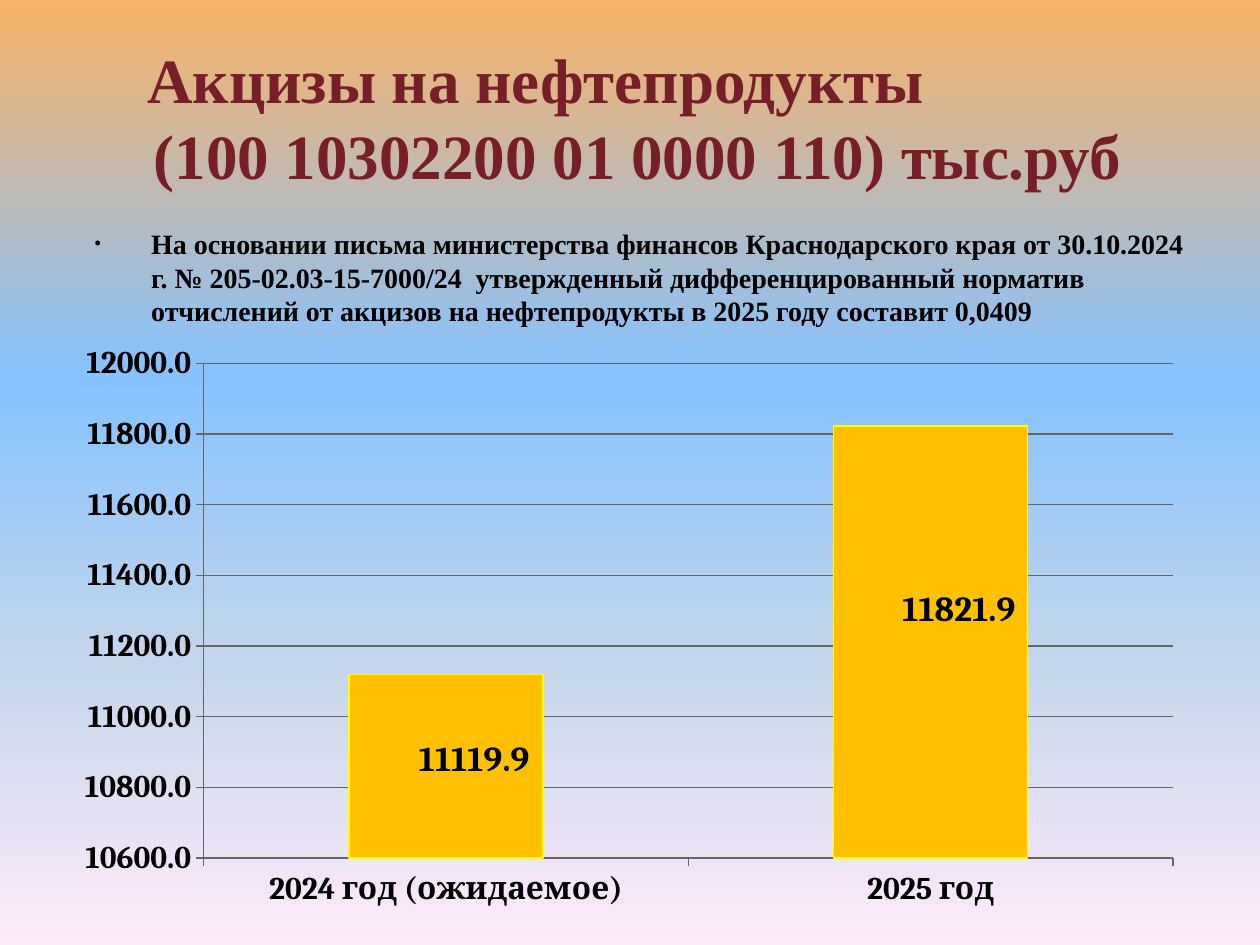
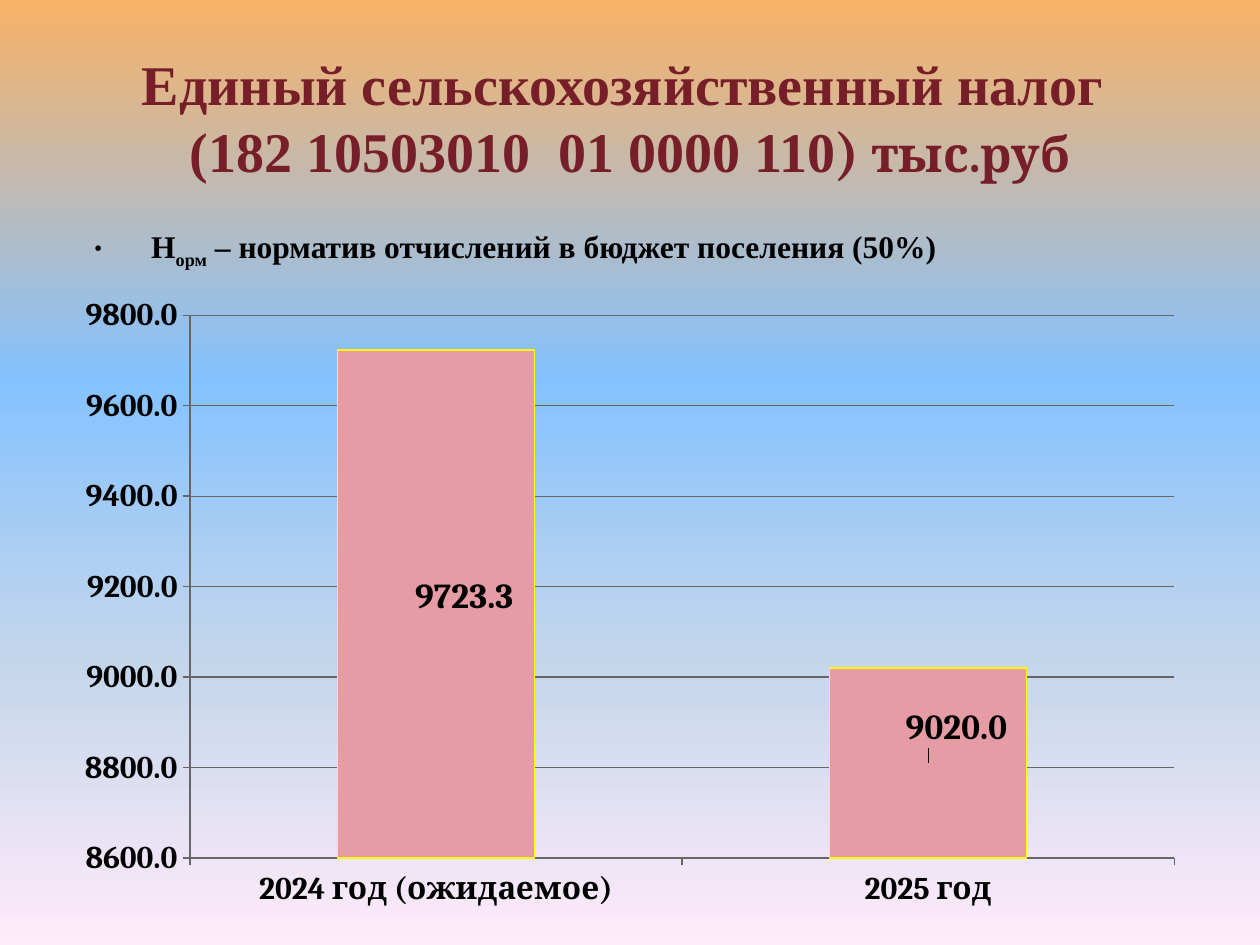
from dataclasses import dataclass

import pptx
import pptx.chart.data
import pptx.dml.color
import pptx.enum.chart
import pptx.enum.text
import pptx.oxml
import pptx.oxml.ns
import pptx.util
from lxml import etree

WIDTH, HEIGHT = pptx.util.Inches(10), pptx.util.Inches(7.5)
COLUMN, ROW = WIDTH // 20, HEIGHT // 150
CHART_BOTTOM = 146

SERIF, CHART_FONT = "Times New Roman", "Cambria"
MAROON, BLACK, YELLOW, GRAY = "771F28", "000000", "FFFF00", "666666"
BACKGROUND = {0: "F9B268", 40: "85C2FF", 70: "C4D6EB", 100: "FFEBFA"}

YEARS = ("2024 год (ожидаемое)", "2025 год")
LABEL_SHIFTS = ((0.025, -0.01), (0.025, -0.055))
Align = pptx.enum.text.PP_ALIGN


@dataclass(frozen=True)
class Span:
    text: str
    size: float
    font: str = SERIF
    baseline: int = 0


@dataclass(frozen=True)
class TitleLine:
    spans: tuple[Span, ...]
    align: Align = Align.CENTER
    indent: float = 0


@dataclass(frozen=True)
class TaxChart:
    values: tuple[float, float]
    color: str
    top: int
    minimum: float
    maximum: float
    plot: tuple[float, float, float, float]


@dataclass(frozen=True)
class TaxSlide:
    title: tuple[TitleLine, ...]
    note: tuple[Span, ...]
    chart: TaxChart


SLIDES = (
    TaxSlide(
        title=(
            TitleLine((Span("Акцизы на нефтепродукты", 36),), Align.LEFT, 0.57),
            TitleLine((Span("(100 10302200 01 0000 110) тыс.руб", 36),), indent=0.12),
        ),
        note=(
            Span(
                "На основании письма министерства финансов Краснодарского края от "
                "30.10.2024 г. № 205-02.03-15-7000/24  утвержденный дифференцированный "
                "норматив отчислений от акцизов на нефтепродукты в 2025 году составит 0,0409",
                16,
            ),
        ),
        chart=TaxChart((11119.9, 11821.9), "FFC000", 53, 10600, 12000,
                       (0.124, 0.05, 0.855, 0.845)),
    ),
    TaxSlide(
        title=(
            TitleLine((Span("Единый сельскохозяйственный налог ", 32),)),
            TitleLine((
                Span("(182 10503010  01 0000 110", 32),
                Span(") ", 32, CHART_FONT),
                Span("тыс.руб", 28, CHART_FONT),
            )),
        ),
        note=(
            Span("Н", 18),
            Span("орм", 18, baseline=-25),
            Span(" – норматив отчислений в бюджет поселения (50%)", 18),
        ),
        chart=TaxChart((9723.3, 9020), "E69CA4", 45, 8600, 9800,
                       (0.112, 0.05, 0.868, 0.853)),
    ),
)


def rgb(color: str) -> pptx.dml.color.RGBColor:
    return pptx.dml.color.RGBColor.from_string(color)


def add_element(parent, tag: str, **attributes):
    element = etree.SubElement(parent, pptx.oxml.ns.qn(tag))
    for name, value in attributes.items():
        element.set(name, str(value))
    return element


def paint_background(master) -> None:
    fill = master.background.fill
    fill.gradient()
    fill.gradient_angle = 270
    stops = next(master.element.iter(pptx.oxml.ns.qn("a:gsLst")))
    for stop in list(stops):
        stops.remove(stop)
    for percent, color in BACKGROUND.items():
        stop = add_element(stops, "a:gs", pos=percent * 1000)
        add_element(stop, "a:srgbClr", val=color)


def place(box, top: int, rows: int) -> None:
    box.left, box.top = COLUMN, top * ROW
    box.width, box.height = 18 * COLUMN, rows * ROW
    box.text_frame.auto_size = pptx.enum.text.MSO_AUTO_SIZE.NONE
    box.text_frame.word_wrap = True


def write_spans(paragraph, spans: tuple[Span, ...], color: str) -> None:
    paragraph.space_before = pptx.util.Pt(0)
    for span in spans:
        run = paragraph.add_run()
        run.text = span.text
        run.font.name, run.font.size = span.font, pptx.util.Pt(span.size)
        run.font.bold = True
        run.font.color.rgb = rgb(color)
        if span.baseline:
            run._r.get_or_add_rPr().set("baseline", str(span.baseline * 1000))


def set_indent(paragraph, left: float, first: float = 0):
    properties = paragraph._p.get_or_add_pPr()
    properties.set("marL", str(pptx.util.Inches(left)))
    properties.set("indent", str(pptx.util.Inches(first)))
    return properties


def write_title(box, lines: tuple[TitleLine, ...]) -> None:
    place(box, 6, 25)
    frame = box.text_frame
    frame.vertical_anchor = pptx.enum.text.MSO_ANCHOR.MIDDLE
    for number, line in enumerate(lines):
        paragraph = frame.add_paragraph() if number else frame.paragraphs[0]
        paragraph.alignment = line.align
        set_indent(paragraph, line.indent)
        write_spans(paragraph, line.spans, MAROON)


def write_note(box, spans: tuple[Span, ...]) -> None:
    place(box, 35, 103)
    paragraph = box.text_frame.paragraphs[0]
    properties = set_indent(paragraph, 0.6, -0.45)
    add_element(add_element(properties, "a:buClr"), "a:srgbClr", val=BLACK)
    add_element(properties, "a:buSzPct", val=65000)
    add_element(properties, "a:buChar", char="•")
    write_spans(paragraph, spans, BLACK)


def manual_layout(**settings):
    """Return a c:layout element holding the given settings in order."""
    layout = pptx.oxml.parse_xml(f"<c:layout {pptx.oxml.ns.nsdecls('c')}/>")
    manual = add_element(layout, "c:manualLayout")
    for name, value in settings.items():
        add_element(manual, f"c:{name}", val=value)
    return layout


def style_font(font, size: float) -> None:
    font.name, font.size, font.bold = CHART_FONT, pptx.util.Pt(size), True
    font.color.rgb = rgb(BLACK)


def style_line(line, color: str) -> None:
    line.color.rgb = rgb(color)
    line.width = pptx.util.Pt(0.75)


def fix_plot_area(chart, shares: tuple[float, float, float, float]) -> None:
    area = next(chart.element.iter(pptx.oxml.ns.qn("c:plotArea")))
    for layout in area.findall(pptx.oxml.ns.qn("c:layout")):
        area.remove(layout)
    x, y, w, h = shares
    area.insert(0, manual_layout(layoutTarget="inner", xMode="edge", yMode="edge",
                                 x=x, y=y, w=w, h=h))


def style_series(chart, color: str) -> None:
    plot = chart.plots[0]
    plot.gap_width, plot.overlap = 150, 100
    plot.vary_by_categories = False
    series = plot.series[0]
    series.format.fill.solid()
    series.format.fill.fore_color.rgb = rgb(color)
    style_line(series.format.line, YELLOW)
    labels = series.data_labels
    labels.show_value = True
    labels.number_format, labels.number_format_is_linked = "0.0", False
    style_font(labels.font, 20)
    for index in range(len(YEARS)):
        style_font(series.points[index].data_label.font, 20)
    point_labels = list(chart.element.iter(pptx.oxml.ns.qn("c:dLbl")))
    for label, (x, y) in zip(point_labels, LABEL_SHIFTS):
        label.insert(1, manual_layout(x=x, y=y))


def draw_chart(slide, tax: TaxChart) -> None:
    data = pptx.chart.data.CategoryChartData(number_format="0.0")
    data.categories = YEARS
    data.add_series("Series 1", tax.values)
    chart = slide.shapes.add_chart(
        pptx.enum.chart.XL_CHART_TYPE.COLUMN_STACKED,
        COLUMN, tax.top * ROW, 18 * COLUMN, (CHART_BOTTOM - tax.top) * ROW, data,
    ).chart
    chart.has_legend = chart.has_title = False
    style_font(chart.font, 18)
    for axis in (chart.category_axis, chart.value_axis):
        style_font(axis.tick_labels.font, 18)
        style_line(axis.format.line, GRAY)
        axis.major_tick_mark = pptx.enum.chart.XL_TICK_MARK.OUTSIDE
    values = chart.value_axis
    values.minimum_scale, values.maximum_scale = tax.minimum, tax.maximum
    values.major_unit = 200
    values.tick_labels.number_format = "0.0"
    values.tick_labels.number_format_is_linked = False
    values.has_major_gridlines = True
    style_line(values.major_gridlines.format.line, GRAY)
    fix_plot_area(chart, tax.plot)
    style_series(chart, tax.color)


def main() -> None:
    deck = pptx.Presentation()
    deck.slide_width, deck.slide_height = WIDTH, HEIGHT
    paint_background(deck.slide_master)
    for content in SLIDES:
        slide = deck.slides.add_slide(deck.slide_layouts[1])
        write_title(slide.shapes.title, content.title)
        write_note(slide.placeholders[1], content.note)
        draw_chart(slide, content.chart)
    deck.save("out.pptx")


if __name__ == "__main__":
    main()
